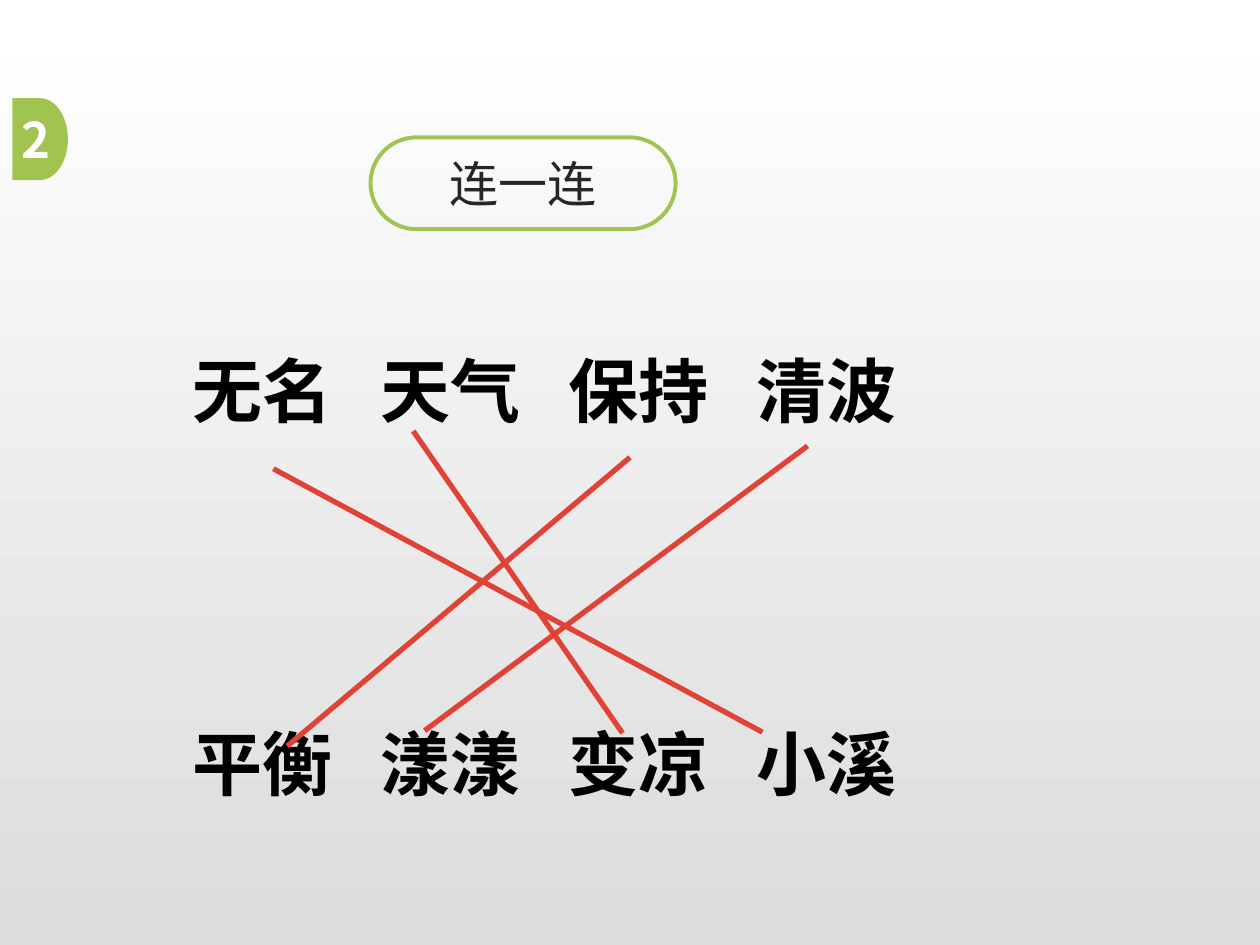
from dataclasses import dataclass

from lxml import etree
from pptx import Presentation
from pptx.dml.color import RGBColor
from pptx.enum.shapes import MSO_CONNECTOR, MSO_SHAPE
from pptx.enum.text import MSO_ANCHOR, PP_ALIGN
from pptx.oxml.ns import qn
from pptx.util import Cm, Pt

LINE = MSO_CONNECTOR.STRAIGHT
PILL = MSO_SHAPE.ROUNDED_RECTANGLE
TAB = MSO_SHAPE.FLOWCHART_DELAY
MIDDLE = MSO_ANCHOR.MIDDLE
CENTER = PP_ALIGN.CENTER


@dataclass(frozen=True)
class Theme:
    font: str = "Noto Sans CJK SC"
    green: str = "A1C450"
    red: str = "E04236"
    black: str = "000000"
    dark: str = "262626"
    white: str = "FFFFFF"
    gray: str = "DCDCDC"
    word: int = 40
    label: int = 28


THEME = Theme()
STEP = 3.79  # distance between word columns, cm
ROWS = [
    (6.88, ["无名", "天气", "保持", "清波"]),
    (14.4, ["平衡", "漾漾", "变凉", "小溪"]),
]
# Each link runs from a word above to its partner below.
LINKS = [
    ((5.51, 9.45), (15.37, 14.76)),
    ((8.33, 8.69), (12.55, 14.78)),
    ((16.28, 8.99), (8.56, 14.73)),
    ((12.7, 9.22), (5.79, 15.04)),
]


def rgb(color):
    return RGBColor.from_string(color)


def style(par, size, color, bold=False):
    for run in par.runs:
        font = run.font
        font.size, font.bold, font.name = Pt(size), bold, THEME.font
        font.color.rgb = rgb(color)
        east = etree.SubElement(run._r.rPr, qn("a:ea"))
        east.set("typeface", THEME.font)


def center(frame, text, color, bold=False):
    frame.margin_left = frame.margin_right = 0
    frame.margin_top = frame.margin_bottom = 0
    frame.vertical_anchor = MIDDLE
    frame.text = text
    par = frame.paragraphs[0]
    par.alignment = CENTER
    style(par, THEME.label, color, bold)


def set_back(slide):
    fill = slide.background.fill
    fill.gradient()
    fill.gradient_angle = 270
    for stop, color, pos in zip(fill.gradient_stops, (THEME.white, THEME.gray), (0, 1)):
        stop.color.rgb = rgb(color)
        stop.position = pos


def add_row(slide, top, words):
    """Set the words of one row on evenly spaced tab stops."""
    box = slide.shapes.add_textbox(Cm(3.63), Cm(top), Cm(18.39), Cm(1.96))
    frame = box.text_frame
    frame.word_wrap = True
    par = frame.paragraphs[0]
    tabs = etree.SubElement(par._p.get_or_add_pPr(), qn("a:tabLst"))
    for col in range(1, len(words)):
        etree.SubElement(tabs, qn("a:tab"), pos=str(Cm(STEP * col)), algn="l")
    par.text = "\t".join(words)
    style(par, THEME.word, THEME.black, True)


def add_link(slide, start, end):
    ends = [Cm(n) for n in (*start, *end)]
    link = slide.shapes.add_connector(LINE, *ends)
    link.line.color.rgb = rgb(THEME.red)
    link.line.width = Pt(3)
    etree.SubElement(link._element.spPr, qn("a:effectLst"))


def add_badge(slide, text):
    badge = slide.shapes.add_shape(TAB, Cm(0.25), Cm(1.98), Cm(1.12), Cm(1.65))
    badge.shadow.inherit = False
    badge.fill.solid()
    badge.fill.fore_color.rgb = rgb(THEME.green)
    badge.line.fill.background()
    center(badge.text_frame, text, THEME.white, True)


def add_title(slide, text):
    area = Cm(7.47), Cm(2.77), Cm(6.15), Cm(1.85)
    pill = slide.shapes.add_shape(PILL, *area)
    pill.adjustments[0] = 0.5
    pill.shadow.inherit = False
    pill.fill.background()
    pill.line.color.rgb = rgb(THEME.green)
    pill.line.width = Pt(2.25)
    title = slide.shapes.title
    title.left, title.top, title.width, title.height = area
    center(title.text_frame, text, THEME.dark)


def main():
    deck = Presentation()
    deck.slide_width, deck.slide_height = Cm(25.4), Cm(19.05)
    slide = deck.slides.add_slide(deck.slide_layouts[5])
    set_back(slide)
    for top, words in ROWS:
        add_row(slide, top, words)
    for start, end in LINKS:
        add_link(slide, start, end)
    add_badge(slide, "2")
    add_title(slide, "连一连")
    deck.save("out.pptx")


if __name__ == "__main__":
    main()
